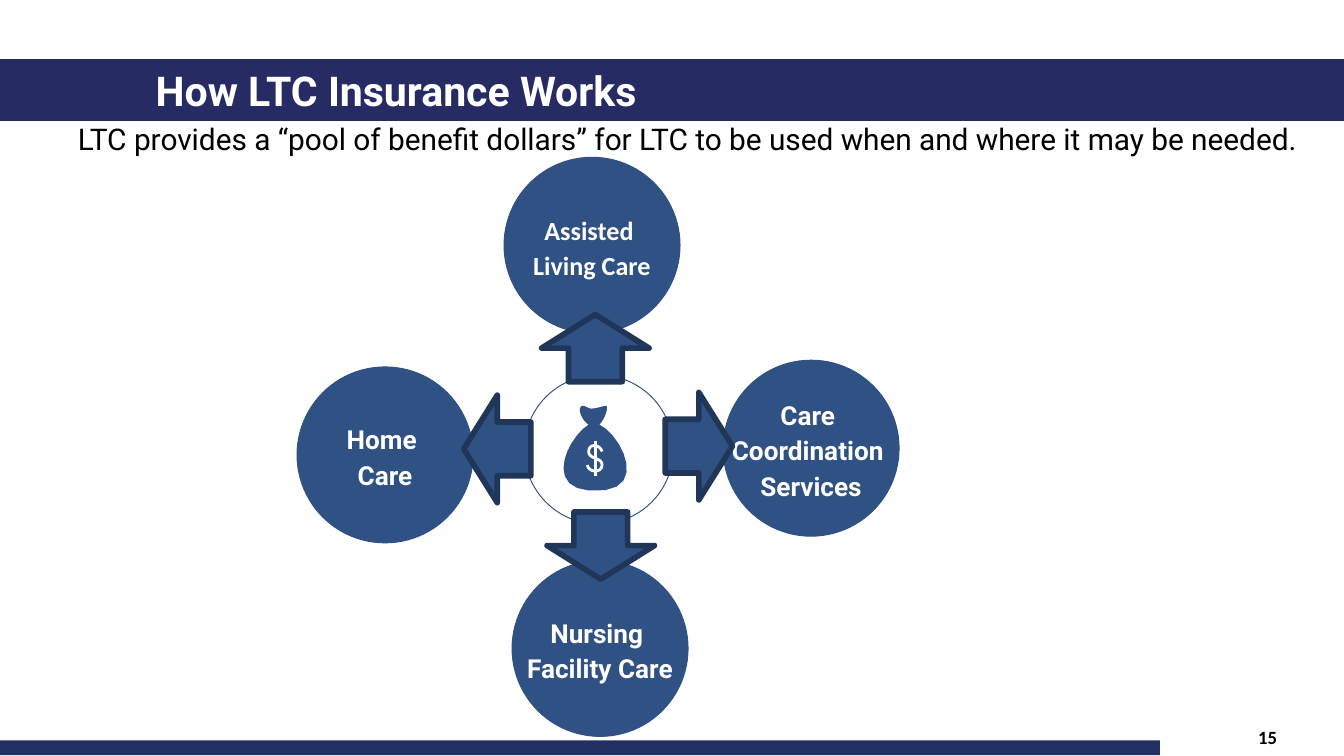
from pptx import Presentation
from pptx.dml.color import RGBColor
from pptx.enum.shapes import MSO_CONNECTOR, MSO_SHAPE
from pptx.enum.text import MSO_ANCHOR, PP_ALIGN
from pptx.util import Inches, Pt
from lxml import etree

OVAL, ARROW, RECT = MSO_SHAPE.OVAL, MSO_SHAPE.RIGHT_ARROW, MSO_SHAPE.RECTANGLE
STRAIGHT = MSO_CONNECTOR.STRAIGHT
TOP, MIDDLE, BOTTOM = MSO_ANCHOR.TOP, MSO_ANCHOR.MIDDLE, MSO_ANCHOR.BOTTOM
LEFT, CENTER, RIGHT = PP_ALIGN.LEFT, PP_ALIGN.CENTER, PP_ALIGN.RIGHT
BLUE, DARK, NAVY, FOOT = "2F5183", "203658", "262B63", "223061"
WHITE, BLACK = "FFFFFF", "000000"
DRAWING = "http://schemas.openxmlformats.org/drawingml/2006/main"

NODE, HUB = 1.31, 1.11  # circle diameters
ARROW_W, ARROW_H = 0.5, 0.8

# Text, font, left and top within the wheel
NODES = [
    ("Home \vCare", "Roboto", 0, 1.56),
    ("Assisted \vLiving Care", "Calibri", 1.54, 0),
    ("Nursing \vFacility Care", "Roboto", 1.6, 3),
    ("Care \vCoordination \nServices", "Roboto", 3.17, 1.51),
]
# Left and top within the wheel, rotation
ARROWS = [(2.74, 1.75, 0), (1.24, 1.77, 180), (2.01, 2.49, 90), (1.97, 1.02, 270)]

# Cubic curves within the hub: start, then control, control, end
BAG = [(0.56, 0.37),
       (0.6, 0.33), (0.63, 0.24), (0.61, 0.23),
       (0.59, 0.23), (0.54, 0.25), (0.51, 0.25),
       (0.48, 0.26), (0.44, 0.21), (0.42, 0.24),
       (0.4, 0.26), (0.43, 0.34), (0.48, 0.37),
       (0.34, 0.45), (0.14, 0.83), (0.48, 0.86),
       (0.96, 0.9), (0.72, 0.44), (0.56, 0.37)]
DOLLAR = [(0.58, 0.57),
          (0.56, 0.51), (0.48, 0.51), (0.48, 0.57),
          (0.48, 0.63), (0.58, 0.61), (0.58, 0.67),
          (0.58, 0.73), (0.48, 0.73), (0.47, 0.67)]


def rgb(color):
    return RGBColor.from_string(color)


def paint(sp, fill=None, line=None, width=0.5):
    sp.shadow.inherit = False
    if fill:
        sp.fill.solid()
        sp.fill.fore_color.rgb = rgb(fill)
    else:
        sp.fill.background()
    if line:
        sp.line.color.rgb = rgb(line)
        sp.line.width = Pt(width)
    else:
        sp.line.fill.background()


def add_shape(s, kind, x, y, w, h, **style):
    sp = s.shapes.add_shape(kind, Inches(x), Inches(y), Inches(w), Inches(h))
    paint(sp, **style)
    return sp


def write(sp, text, size, font, color, bold=True, align=LEFT, anchor=TOP,
          wrap=True, spacing=None):
    tf = sp.text_frame
    tf.text = text
    tf.word_wrap = wrap
    tf.vertical_anchor = anchor
    for p in tf.paragraphs:
        p.alignment = align
        p.line_spacing = spacing
        p.font.size = Pt(size)
        p.font.name = font
        p.font.bold = bold
        p.font.color.rgb = rgb(color)
    return tf


def add_text(s, x, y, w, h, *args, **style):
    box = s.shapes.add_textbox(Inches(x), Inches(y), Inches(w), Inches(h))
    return write(box, *args, **style)


def add_curve(s, x, y, points, closed, **style):
    def at(point):
        return Inches(x + point[0]), Inches(y + point[1])

    steps = 10
    path = []
    for i in range(0, len(points) - 1, 3):
        a, b, c, d = points[i:i + 4]
        for n in range(1, steps + 1):
            t = n / steps
            u = 1 - t
            path.append(at([u**3 * a[k] + 3 * u * u * t * b[k]
                            + 3 * u * t * t * c[k] + t**3 * d[k] for k in (0, 1)]))
    builder = s.shapes.build_freeform(*at(points[0]))
    builder.add_line_segments(path, close=closed)
    paint(builder.convert_to_shape(), **style)


def add_header(s, x, y, w):
    add_shape(s, RECT, x, y, w, 0.46, fill=NAVY)
    add_text(s, x + 1.06, y - 0.23, 6.75, 0.69, "How LTC Insurance Works",
             22, "Roboto", WHITE, anchor=BOTTOM)
    tf = add_text(s, x + 0.58, y + 0.46, 9.83, 0.27,
                  "LTC provides a “pool of benefit dollars” for LTC to be used "
                  "when and where it may be needed.", 16, "Roboto", BLACK, bold=False)
    tf.margin_left = tf.margin_right = tf.margin_top = tf.margin_bottom = 0


def add_hub(s, x, y):
    # Money bag with dollar sign
    add_curve(s, x, y, BAG, True, fill=BLUE)
    add_curve(s, x, y, DOLLAR, False, line=WHITE, width=1.5)
    bar = s.shapes.add_connector(STRAIGHT, Inches(x + 0.53), Inches(y + 0.49),
                                 Inches(x + 0.53), Inches(y + 0.75))
    bar.line.color.rgb = rgb(WHITE)
    bar.line.width = Pt(1.5)
    etree.SubElement(bar._element.spPr, f"{{{DRAWING}}}effectLst")
    # Ring
    add_shape(s, OVAL, x, y, HUB, HUB, line=BLUE)


def add_wheel(s, x, y):
    # Care settings
    for text, font, dx, dy in NODES:
        sp = add_shape(s, OVAL, x + dx, y + dy, NODE, NODE, fill=BLUE, line=BLUE)
        tf = write(sp, text, 14, font, WHITE, align=CENTER, anchor=MIDDLE,
                   wrap=False, spacing=1.14)
        tf.margin_top = tf.margin_bottom = Inches(0.1)
    add_hub(s, x + 1.69, y + 1.62)
    # Arrows from the hub to each setting
    for dx, dy, angle in ARROWS:
        sp = add_shape(s, ARROW, x + dx, y + dy, ARROW_W, ARROW_H,
                       fill=BLUE, line=DARK, width=3)
        sp.rotation = angle


def add_footer(s, x, y):
    add_shape(s, RECT, x, y, 8.63, 0.11, fill=FOOT)
    add_text(s, x + 7.64, y - 0.16, 1.96, 0.27, "15", 10, "Calibri", BLACK, align=RIGHT)


def main():
    prs = Presentation()
    # Widescreen, 16:9
    prs.slide_width = Inches(10)
    prs.slide_height = prs.slide_width * 9 // 16
    s = prs.slides.add_slide(prs.slide_layouts[6])
    add_footer(s, 0, 5.51)
    add_header(s, 0, 0.44, 10)
    add_wheel(s, 2.21, 1.17)
    prs.save("out.pptx")


if __name__ == "__main__":
    main()
